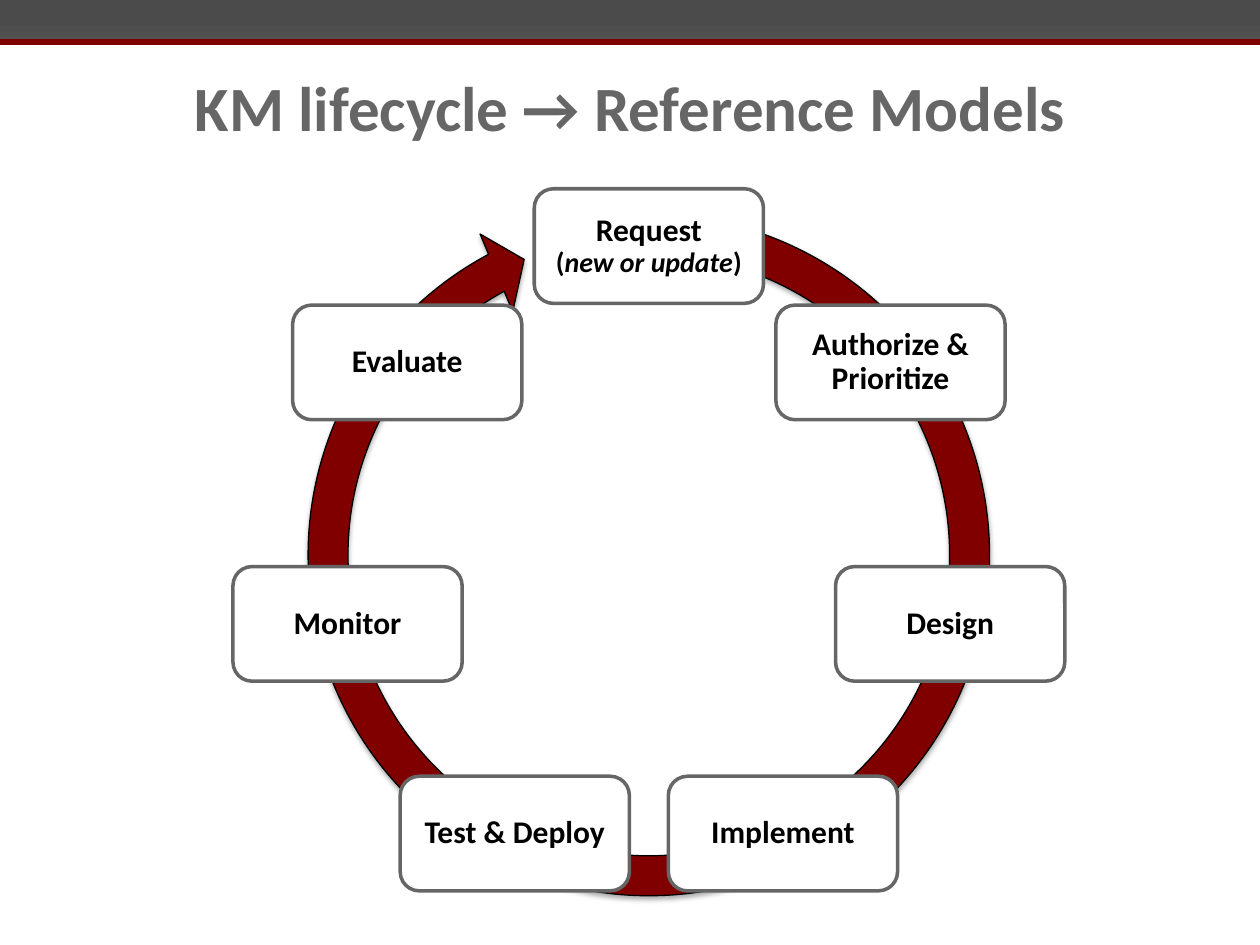
import math

import pptx
import pptx.util
from lxml import etree
from pptx.dml.color import RGBColor
from pptx.enum.shapes import MSO_CONNECTOR, MSO_SHAPE
from pptx.enum.text import MSO_ANCHOR, PP_ALIGN
from pptx.oxml.ns import qn

Pt = pptx.util.Pt

# Content: each stage is a list of lines, each line a list of (text, size, italic)
HEADING = "KM lifecycle → Reference Models"
STAGES = [
    [[("Request", 18, False)],
     [("(", 16, False), ("new or update", 16, True), (")", 16, False)]],
    [[("Authorize & Prioritize", 18, False)]],
    [[("Design", 18, False)]],
    [[("Implement", 18, False)]],
    [[("Test & Deploy", 18, False)]],
    [[("Monitor", 18, False)]],
    [[("Evaluate", 18, False)]],
]

# Layout in points
SLIDE_W, SLIDE_H = 720, 540
BAND_H = 24
CENTER_X, CENTER_Y = 370.8, 317.2
RING_SIZE, STAGE_RADIUS = 414.7, 176.6
STAGE_W, STAGE_H = 131, 65.5
RING_ADJUSTMENTS = [0.055, 3.307, 144.975, 169.607, 0.058]

GRAY, RED, BLACK, WHITE = "666666", "800000", "000000", "FFFFFF"
FRAME_FORMAT = {"word_wrap": True, "vertical_anchor": MSO_ANCHOR.MIDDLE,
                "margin_left": Pt(8.5), "margin_right": Pt(8.5),
                "margin_top": Pt(8.5), "margin_bottom": Pt(8.5)}
PARAGRAPH_FORMAT = {"alignment": PP_ALIGN.CENTER, "line_spacing": 0.9}


def color(hex_value):
    return RGBColor.from_string(hex_value)


def assign(target, values):
    for name, value in values.items():
        setattr(target, name, value)


def style_font(font, size, hex_value, italic=False):
    assign(font, {"name": "Calibri", "size": Pt(size), "bold": True,
                  "italic": italic})
    font.color.rgb = color(hex_value)


def add_centered(slide, preset, x, y, width, height, fill, line, line_width):
    shape = slide.shapes.add_shape(preset, Pt(x - width / 2), Pt(y - height / 2),
                                   Pt(width), Pt(height))
    shape.shadow.inherit = False
    shape.fill.solid()
    shape.fill.fore_color.rgb = color(fill)
    shape.line.color.rgb = color(line)
    shape.line.width = Pt(line_width)
    return shape


def add_header(slide):
    band = slide.shapes.add_shape(MSO_SHAPE.RECTANGLE, 0, 0,
                                  Pt(SLIDE_W), Pt(BAND_H))
    band.shadow.inherit = False
    band.line.fill.background()
    band.fill.gradient()
    band.fill.gradient_angle = 270
    for stop, (position, shade) in zip(band.fill.gradient_stops,
                                       [(0.5, "4B4B4B"), (1, "535353")]):
        stop.position = position
        stop.color.rgb = color(shade)

    rule = slide.shapes.add_connector(MSO_CONNECTOR.STRAIGHT, 0, Pt(BAND_H),
                                      Pt(SLIDE_W), Pt(BAND_H))
    rule.line.color.rgb = color(RED)
    rule.line.width = Pt(3)
    etree.SubElement(rule._element.spPr, qn("a:effectLst"))


def add_heading(slide):
    heading = slide.shapes.title
    assign(heading, {"left": Pt(36), "top": Pt(29), "width": Pt(648),
                     "height": Pt(63)})
    heading.text_frame.text = HEADING
    heading.text_frame.vertical_anchor = MSO_ANCHOR.MIDDLE
    paragraph = heading.text_frame.paragraphs[0]
    paragraph.alignment = PP_ALIGN.CENTER
    style_font(paragraph.runs[0].font, 36, GRAY)


def add_ring(slide):
    ring = add_centered(slide, MSO_SHAPE.CIRCULAR_ARROW, CENTER_X, CENTER_Y,
                        RING_SIZE, RING_SIZE, RED, BLACK, 0.75)
    for index, value in enumerate(RING_ADJUSTMENTS):
        ring.adjustments[index] = value
    # Soft shadow below the ring
    effects = ring._element.spPr.find(qn("a:effectLst"))
    shadow = etree.SubElement(effects, qn("a:outerShdw"), blurRad=str(Pt(3.1)),
                              dist=str(Pt(1.8)), dir="5400000", rotWithShape="0")
    shade = etree.SubElement(shadow, qn("a:srgbClr"), val=BLACK)
    etree.SubElement(shade, qn("a:alpha"), val="35000")


def add_stage(slide, lines, angle):
    stage = add_centered(slide, MSO_SHAPE.ROUNDED_RECTANGLE,
                         CENTER_X + STAGE_RADIUS * math.sin(angle),
                         CENTER_Y - STAGE_RADIUS * math.cos(angle),
                         STAGE_W, STAGE_H, WHITE, GRAY, 2)
    assign(stage.text_frame, FRAME_FORMAT)
    paragraph = stage.text_frame.paragraphs[0]
    assign(paragraph, PARAGRAPH_FORMAT)
    for number, line in enumerate(lines):
        if number:
            paragraph.add_line_break()
        for text, size, italic in line:
            run = paragraph.add_run()
            run.text = text
            style_font(run.font, size, BLACK, italic)


def main():
    deck = pptx.Presentation()
    assign(deck, {"slide_width": Pt(SLIDE_W), "slide_height": Pt(SLIDE_H)})
    slide = deck.slides.add_slide(deck.slide_layouts[5])
    add_header(slide)
    add_heading(slide)
    add_ring(slide)
    # Stages sit clockwise at equal angles from the top
    for index, lines in enumerate(STAGES):
        add_stage(slide, lines, 2 * math.pi * index / len(STAGES))
    deck.save("out.pptx")


if __name__ == "__main__":
    main()
